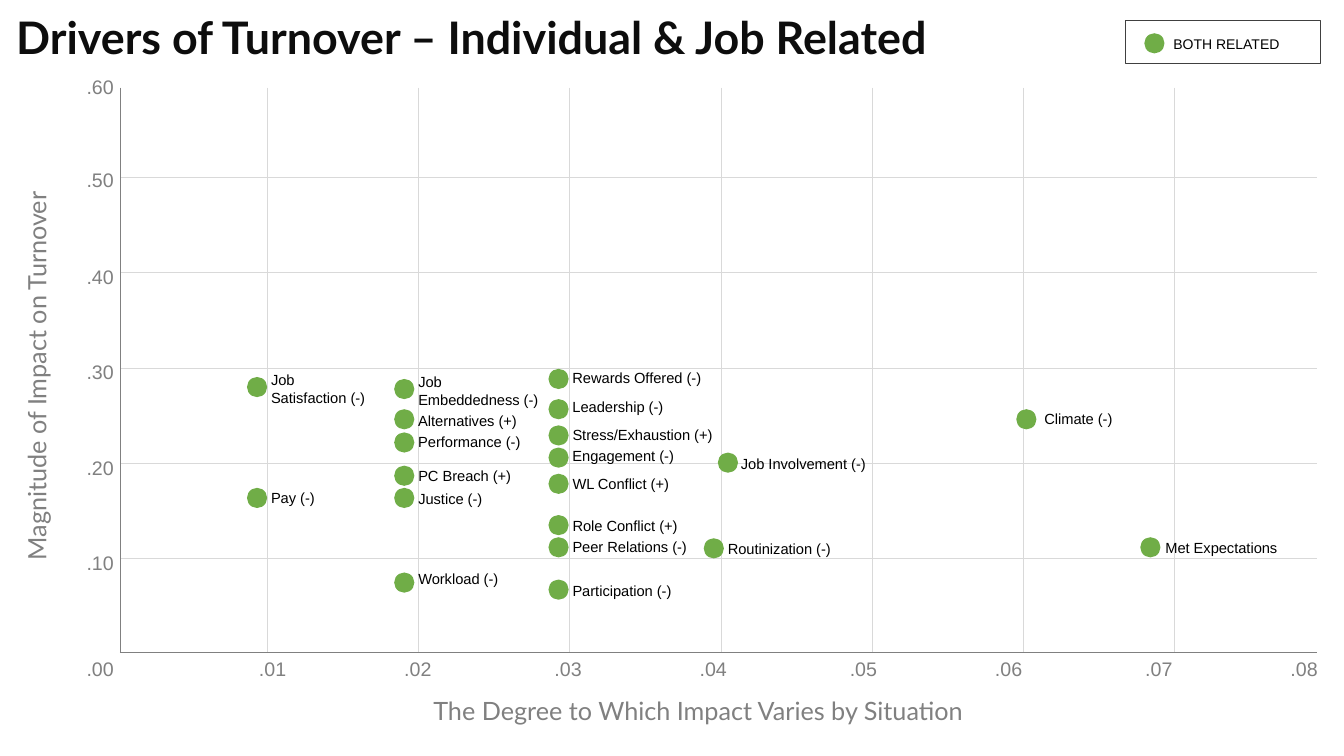
import pptx
import pptx.dml.color
import pptx.enum.shapes
import pptx.enum.text
import pptx.util
import lxml.etree

Inches = pptx.util.Inches
Pt = pptx.util.Pt
RGBColor = pptx.dml.color.RGBColor
Anchor = pptx.enum.text.MSO_ANCHOR
Align = pptx.enum.text.PP_ALIGN
AutoSize = pptx.enum.text.MSO_AUTO_SIZE
Preset = pptx.enum.shapes.MSO_SHAPE

BLACK = RGBColor(0x00, 0x00, 0x00)
INK = RGBColor(0x0D, 0x0D, 0x0D)
FRAME = RGBColor(0x40, 0x40, 0x40)
GRAY = RGBColor(0x80, 0x80, 0x80)
GRID = RGBColor(0xD9, 0xD9, 0xD9)
GREEN = RGBColor(0x70, 0xAD, 0x47)
WHITE = RGBColor(0xFF, 0xFF, 0xFF)

# Plot area edges
LEFT, TOP, RIGHT, BOTTOM = 1.19, 0.87, 13.06, 6.47
DOT_SIZE = 0.2

TITLE_FONT = {"name": "Lato", "size": Pt(32), "bold": True}
AXIS_FONT = {"name": "Lato", "size": Pt(18)}
TICK_FONT = {"name": "Arial", "size": Pt(14)}
LABEL_FONT = {"name": "Arial", "size": Pt(10.5)}
LEGEND_FONT = {"name": "Arial", "size": Pt(10)}

# Columns: dot left, label left, then (driver, dot top, label top, label width)
DRIVERS = [
    (2.45, 2.59, [("Job Satisfaction (-)", 3.74, 3.63, 1.17),
                  ("Pay (-)", 4.84, 4.79, 0.66)]),
    (3.91, 4.05, [("Job Embeddedness (-)", 3.76, 3.65, 1.41),
                  ("Alternatives (+)", 4.06, 4.03, 1.24),
                  ("Performance (-)", 4.29, 4.24, 1.23),
                  ("PC Breach (+)", 4.62, 4.57, 1.18),
                  ("Justice (-)", 4.84, 4.8, 0.88),
                  ("Workload (-)", 5.68, 5.6, 1.05)]),
    (5.44, 5.58, [("Rewards Offered (-)", 3.66, 3.6, 1.56),
                  ("Leadership (-)", 3.96, 3.89, 1.14),
                  ("Stress/Exhaustion (+)", 4.22, 4.17, 1.68),
                  ("Engagement (-)", 4.44, 4.37, 1.27),
                  ("WL Conflict (+)", 4.7, 4.65, 1.22),
                  ("Role Conflict (+)", 5.11, 5.07, 1.31),
                  ("Peer Relations (-)", 5.33, 5.28, 1.41),
                  ("Participation (-)", 5.75, 5.71, 1.25)]),
    (6.98, 7.12, [("Routinization (-)", 5.34, 5.3, 1.25)]),
    (7.12, 7.25, [("Job Involvement (-)", 4.49, 4.45, 1.52)]),
    (10.08, 10.26, [("Climate (-)", 4.06, 4.01, 0.92)]),
    (11.31, 11.46, [("Met Expectations", 5.33, 5.29, 1.38)]),
]
TWO_LINE_DRIVERS = ("Job Satisfaction (-)", "Job Embeddedness (-)")


def fill_text(box, text, font, color, anchor=Anchor.TOP, align=Align.LEFT,
              wrap=False):
    frame = box.text_frame
    frame_format = {"word_wrap": wrap, "vertical_anchor": anchor,
                    "auto_size": AutoSize.SHAPE_TO_FIT_TEXT}
    for name, value in frame_format.items():
        setattr(frame, name, value)
    para = frame.paragraphs[0]
    para.alignment = align
    span = para.add_run()
    span.text = text
    for name, value in font.items():
        setattr(span.font, name, value)
    span.font.color.rgb = color


def add_text(page, place, text, font, color, **layout):
    box = page.shapes.add_textbox(*map(Inches, place))
    fill_text(box, text, font, color, **layout)
    return box


def add_line(page, start, end, color):
    line = page.shapes.add_connector(
        pptx.enum.shapes.MSO_CONNECTOR.STRAIGHT,
        *map(Inches, start + end))
    line.line.color.rgb = color
    line.line.width = Pt(0.25)
    properties = line._element.spPr
    lxml.etree.SubElement(properties, pptx.oxml.ns.qn("a:effectLst"))


def add_dot(page, left, top):
    dot = page.shapes.add_shape(
        Preset.FLOWCHART_CONNECTOR,
        *map(Inches, (left, top, DOT_SIZE, DOT_SIZE)))
    dot.shadow.inherit = False
    dot.fill.solid()
    dot.fill.fore_color.rgb = GREEN
    dot.line.fill.background()


def add_title(page):
    title = page.shapes.title
    place = {"left": 0.06, "top": 0.05, "width": 9.52, "height": 0.64}
    for name, value in place.items():
        setattr(title, name, Inches(value))
    fill_text(title, "Drivers of Turnover – Individual & Job Related",
              TITLE_FONT, INK)


def add_grid(page):
    for step in range(7):
        x = 2.65 + 1.5 * step
        add_line(page, (x, TOP), (x, BOTTOM), GRID)
    for step in range(5):
        y = 1.76 + 3.78 / 4 * step
        add_line(page, (LEFT, y), (RIGHT, y), GRID)
    add_line(page, (LEFT, TOP), (LEFT, BOTTOM), GRAY)
    add_line(page, (LEFT, BOTTOM), (RIGHT, BOTTOM), GRAY)


def add_ticks(page):
    for step, top in enumerate((6.47, 5.42, 4.47, 3.52, 2.58, 1.62, 0.69)):
        add_text(page, (0.76, top, 0.52, 0.4), f".{step}0", TICK_FONT, GRAY)
    lefts = (2.47, 3.91, 5.4, 6.84, 8.33, 9.77, 11.26, 12.7)
    for step, left in enumerate(lefts, 1):
        add_text(page, (left, BOTTOM, 0.52, 0.4), f".0{step}", TICK_FONT, GRAY)


def add_axis_title(page, place, text, rotation=0):
    box = add_text(page, place, text, AXIS_FONT, GRAY, align=Align.CENTER)
    box.rotation = rotation
    box.fill.solid()
    box.fill.fore_color.rgb = WHITE


def add_drivers(page):
    for dot_left, label_left, drivers in DRIVERS:
        for text, dot_top, label_top, width in drivers:
            wrap = text in TWO_LINE_DRIVERS
            height = 0.45 if wrap else 0.29
            add_text(page, (label_left, label_top, width, height), text,
                     LABEL_FONT, BLACK, anchor=Anchor.MIDDLE, wrap=wrap)
            add_dot(page, dot_left, dot_top)


def add_legend(page):
    frame = page.shapes.add_shape(
        Preset.RECTANGLE, *map(Inches, (11.16, 0.2, 1.94, 0.43)))
    frame.shadow.inherit = False
    frame.fill.background()
    frame.line.color.rgb = FRAME
    frame.line.width = Pt(0.5)
    add_dot(page, 11.35, 0.33)
    add_text(page, (11.54, 0.3, 1.27, 0.27), "BOTH RELATED", LEGEND_FONT,
             BLACK, anchor=Anchor.MIDDLE)


def main():
    deck = pptx.Presentation()
    deck.slide_width = Inches(13.33)
    deck.slide_height = Inches(7.5)
    page = deck.slides.add_slide(deck.slide_layouts[5])

    # Title and plot frame
    add_title(page)
    add_grid(page)
    add_ticks(page)

    # Axis titles
    add_axis_title(page, (-1.6, 3.53, 3.92, 0.4),
                   "Magnitude of Impact on Turnover", rotation=270)
    add_axis_title(page, (4.13, 6.85, 5.59, 0.4),
                   "The Degree to Which Impact Varies by Situation")

    # Drivers and legend
    add_drivers(page)
    add_legend(page)
    deck.save("out.pptx")


if __name__ == "__main__":
    main()
